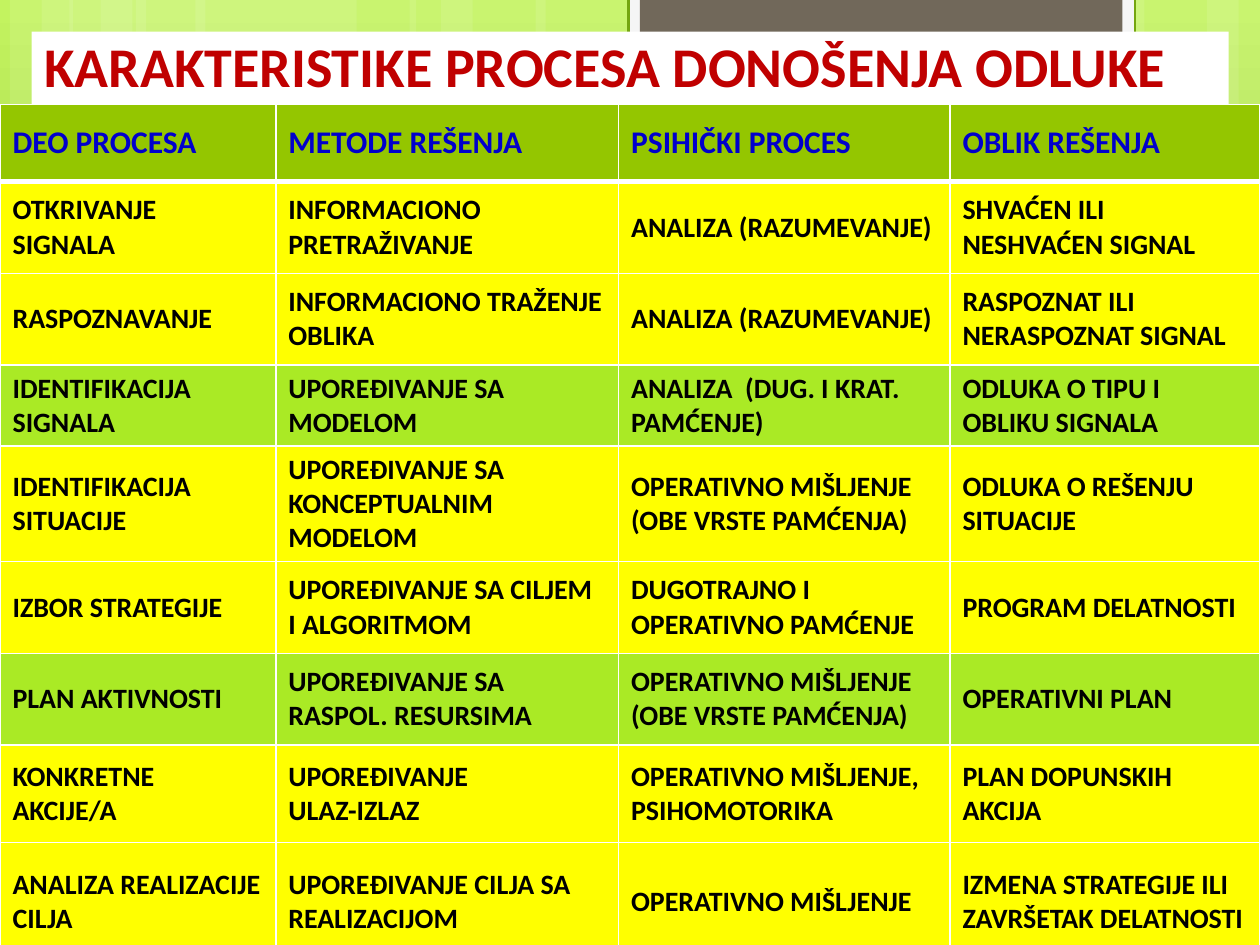
from copy import deepcopy

from lxml.etree import SubElement
from pptx import Presentation
from pptx.dml.color import RGBColor
from pptx.enum.shapes import MSO_SHAPE
from pptx.enum.text import MSO_ANCHOR, PP_ALIGN
from pptx.oxml.ns import qn
from pptx.util import Cm, Pt

WIDE, HIGH = 25.4, 19.05
LIME, YELLOW, GREEN = "94C600", "FFFF00", "AAEA25"
WHITE = "FFFFFF"

# left, width of the pale upright bands
BANDS = [
    (2.74, 4.45), (0.2, 1.27), (0.84, 2.11),
    (3.94, 4.45), (1.4, 1.27), (2.03, 2.11),
    (18.62, 4.45), (24.33, 1.27), (22.86, 2.11),
    (10.8, 7.83), (8.26, 1.27), (8.89, 2.11),
]
COLS = [5.56, 6.91, 6.68, 6.25]
# height, fill, cell texts
ROWS = [
    (1.55, LIME, ["DEO PROCESA", "METODE REŠENJA",
                  "PSIHIČKI PROCES", "OBLIK REŠENJA"]),
    (1.85, YELLOW, ["OTKRIVANJE SIGNALA", "INFORMACIONO PRETRAŽIVANJE",
                    "ANALIZA (RAZUMEVANJE)", "SHVAĆEN ILI NESHVAĆEN SIGNAL"]),
    (1.85, YELLOW, ["RASPOZNAVANJE", "INFORMACIONO TRAŽENJE OBLIKA",
                    "ANALIZA (RAZUMEVANJE)",
                    "RASPOZNAT ILI NERASPOZNAT SIGNAL"]),
    (1.45, GREEN, ["IDENTIFIKACIJA SIGNALA", "UPOREĐIVANJE SA MODELOM",
                   "ANALIZA  (DUG. I KRAT. PAMĆENJE)",
                   "ODLUKA O TIPU I OBLIKU SIGNALA"]),
    (2.06, YELLOW, ["IDENTIFIKACIJA SITUACIJE",
                    "UPOREĐIVANJE SA KONCEPTUALNIM MODELOM",
                    "OPERATIVNO MIŠLJENJE (OBE VRSTE PAMĆENJA)",
                    "ODLUKA O REŠENJU SITUACIJE"]),
    (1.85, YELLOW, ["IZBOR STRATEGIJE", "UPOREĐIVANJE SA CILJEM I ALGORITMOM",
                    "DUGOTRAJNO I OPERATIVNO PAMĆENJE", "PROGRAM DELATNOSTI"]),
    (1.85, GREEN, ["PLAN AKTIVNOSTI", "UPOREĐIVANJE SA RASPOL. RESURSIMA",
                   "OPERATIVNO MIŠLJENJE (OBE VRSTE PAMĆENJA)",
                   "OPERATIVNI PLAN"]),
    (1.96, YELLOW, ["KONKRETNE AKCIJE/A", "UPOREĐIVANJE\nULAZ-IZLAZ",
                    "OPERATIVNO MIŠLJENJE, PSIHOMOTORIKA",
                    "PLAN DOPUNSKIH AKCIJA"]),
    (2.41, YELLOW, ["ANALIZA REALIZACIJE CILJA",
                    "UPOREĐIVANJE CILJA SA REALIZACIJOM",
                    "OPERATIVNO MIŠLJENJE",
                    "IZMENA STRATEGIJE ILI\nZAVRŠETAK DELATNOSTI"]),
]


def tint(code):
    return RGBColor.from_string(code)


class Page:
    """The slide being built and its text style."""

    font = {"name": "Calibri", "bold": True}

    def __init__(self, slide):
        self.slide = slide

    def ground(self, stops):
        """Fill the background from top to bottom; stops are (share, colour)."""
        fill = self.slide.background.fill
        fill.gradient()
        fill.gradient_angle = 270
        first = self.slide.element.find(".//" + qn("a:gs"))
        for _ in stops[2:]:
            first.addnext(deepcopy(first))
        for stop, (share, code) in zip(fill.gradient_stops, stops):
            stop.position = share
            stop.color.rgb = tint(code)

    def box(self, left, top, width, height, fill, line=None, alpha=None):
        shape = self.slide.shapes.add_shape(
            MSO_SHAPE.RECTANGLE, Cm(left), Cm(top), Cm(width), Cm(height))
        shape.shadow.inherit = False
        shape.fill.solid()
        shape.fill.fore_color.rgb = tint(fill)
        if alpha:
            color = shape.element.spPr.find(".//" + qn("a:srgbClr"))
            SubElement(color, qn("a:alpha"), val=str(alpha * 1000))
        if line:
            shape.line.color.rgb = tint(line)
            shape.line.width = Pt(1.5)
        else:
            shape.line.fill.background()
        return shape

    def label(self, frame, text, size, code):
        frame.text = text
        look = {**self.font, "size": Pt(size)}
        for para in frame.paragraphs:
            para.alignment = PP_ALIGN.LEFT
            for run in para.runs:
                for key, value in look.items():
                    setattr(run.font, key, value)
                run.font.color.rgb = tint(code)

    def title(self, text, *place):
        frame = self.box(*place, WHITE).text_frame
        frame.word_wrap = True
        frame.vertical_anchor = MSO_ANCHOR.BOTTOM
        self.label(frame, text, 32, "C00000")

    def edge(self, cell, sides):
        """Draw white cell borders; sides maps a side letter to points."""
        props = cell._tc.get_or_add_tcPr()
        for side, width in sides.items():
            line = SubElement(props, qn("a:ln" + side), w=str(Pt(width)))
            fill = SubElement(line, qn("a:solidFill"))
            SubElement(fill, qn("a:srgbClr"), val=WHITE)

    def table(self, top, cols, rows):
        grid = self.slide.shapes.add_table(
            len(rows), len(cols), 0, Cm(top), Cm(sum(cols)),
            Cm(sum(row[0] for row in rows))).table
        grid.horz_banding = False
        for col, width in zip(grid.columns, cols):
            col.width = Cm(width)
        for i, (height, fill, texts) in enumerate(rows):
            grid.rows[i].height = Cm(height)
            size, code = (16, "000000") if i else (18, "0000CC")
            sides = {"L": 1, "R": 1, "T": 3 if i == 1 else 1,
                     "B": 1 if i else 3}
            for cell, text in zip(grid.rows[i].cells, texts):
                self.edge(cell, sides)
                cell.fill.solid()
                cell.fill.fore_color.rgb = tint(fill)
                cell.vertical_anchor = MSO_ANCHOR.MIDDLE
                self.label(cell.text_frame, text, size, code)


def main():
    deck = Presentation()
    deck.slide_width, deck.slide_height = Cm(WIDE), Cm(HIGH)
    page = Page(deck.slides.add_slide(deck.slide_layouts[6]))
    page.ground([(0, "C3F35F"), (0.62, "93BF3F"), (1, "81A53E")])
    for left, width in BANDS:
        page.box(left, 0, width, HIGH, WHITE, alpha=10)
    page.box(12.67, -0.05, 10.21, 1.93, "F5F5F5", line="74A510")
    page.box(12.9, -0.05, 9.73, 1.73, "71685A")
    page.table(2.11, COLS, ROWS)
    page.title("KARAKTERISTIKE PROCESA DONOŠENJA ODLUKE",
               0.64, 0.64, 24.13, 1.47)
    deck.save("out.pptx")


if __name__ == "__main__":
    main()
